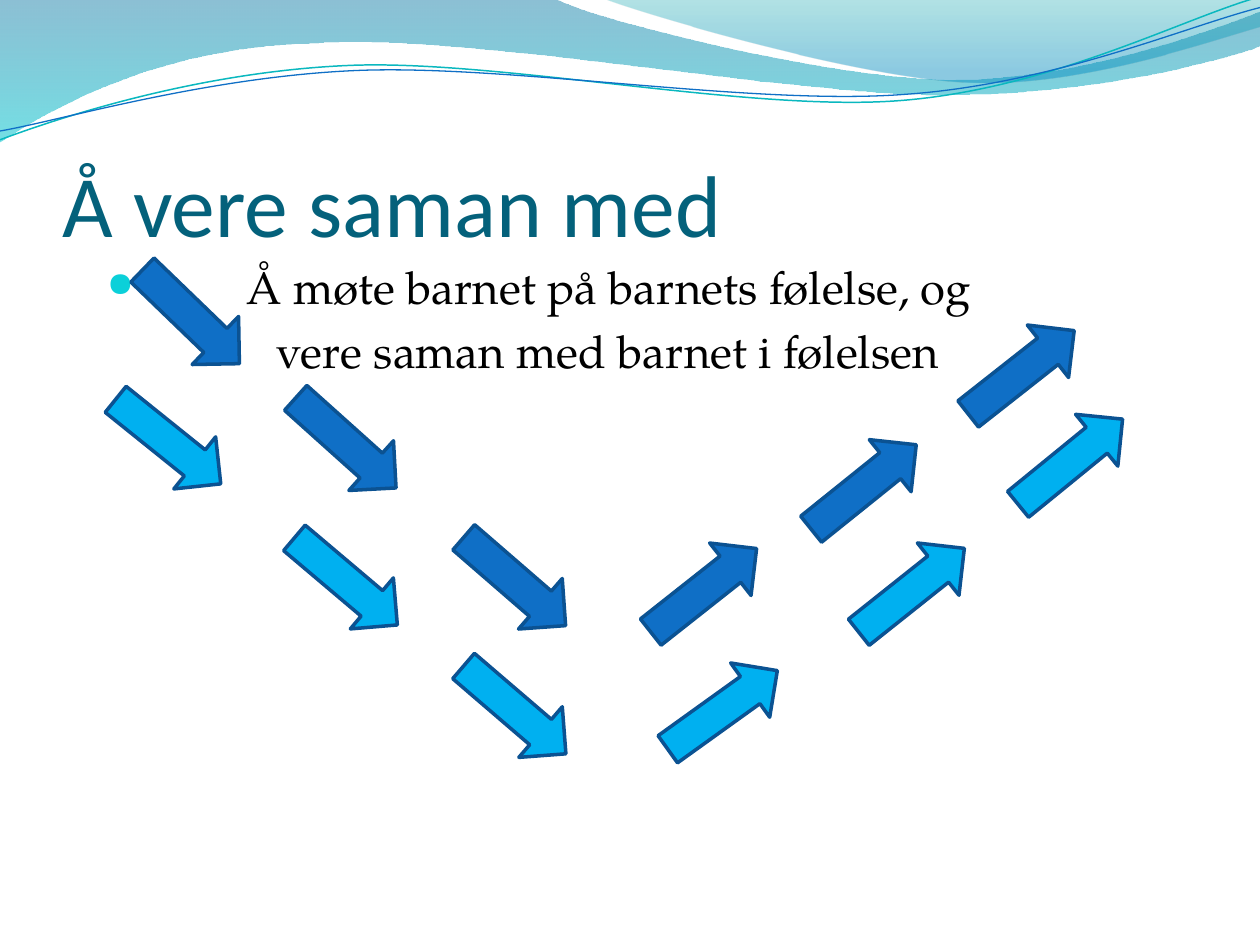
from lxml.etree import SubElement
from pptx import Presentation
from pptx.dml.color import RGBColor
from pptx.enum.shapes import MSO_SHAPE
from pptx.enum.text import MSO_ANCHOR
from pptx.oxml.ns import qn
from pptx.util import Inches, Pt


def color(hex_string):
    return RGBColor.from_string(hex_string)


def add_curve(shapes, segments, closed):
    """Draw segments as one outline: a pair is a line end, six numbers are a Bézier curve."""
    start, *others = segments
    points = [(Inches(x), Inches(y))
              for segment in others for x, y in zip(segment[::2], segment[1::2])]
    builder = shapes.build_freeform(Inches(start[0]), Inches(start[1]))
    builder.add_line_segments(points, close=closed)
    shape = builder.convert_to_shape()
    shape.shadow.inherit = False
    # Join each three line ends of a curve into one Bézier segment
    lines = iter(list(shape._element.iter(qn("a:lnTo"))))
    for segment in others:
        line = next(lines)
        if len(segment) == 6:
            line.tag = qn("a:cubicBezTo")
            for extra in (next(lines), next(lines)):
                line.append(extra[0])
                extra.getparent().remove(extra)
    return shape


presentation = Presentation()
presentation.slide_width = Inches(10)
presentation.slide_height = Inches(7.5)
slide = presentation.slides.add_slide(presentation.slide_layouts[6])

# Translucent waves along the top: outline, then (position, colour, opacity in percent)
waves = [
    ([(0, 0), (4.4, -0.01), (4.76, 0.17, 6.64, 0.63, 7.58, 0.63),
      (8.53, 0.63, 9.58, 0.26, 10, 0.09), (10.01, 0.36),
      (9.83, 0.44, 8.7, 0.76, 7.46, 0.75), (6.22, 0.75, 3.82, 0.28, 2.57, 0.34),
      (1.29, 0.36, 0.46, 0.83, -0.01, 1.13)],
     [(0, "0074A1", 45), (1, "00C6CF", 55)]),
    ([(4.79, -0.01), (5.09, 0.11, 6.82, 0.62, 7.69, 0.65),
      (8.56, 0.69, 9.61, 0.32, 10, 0.21), (10, 0)],
     [(0, "00A1A9", 30), (0.8, "008BBF", 45)]),
]
for segments, stops in waves:
    wave = add_curve(slide.shapes, segments, True)
    wave.line.fill.background()
    wave.fill.gradient()
    wave.fill.gradient_angle = 270
    for stop, (position, hex_string, opacity) in zip(wave.fill.gradient_stops, stops):
        stop.position = position
        stop.color.rgb = color(hex_string)
    fill_colors = wave._element.spPr.iter(qn("a:srgbClr"))
    for fill_color, (position, hex_string, opacity) in zip(fill_colors, stops):
        SubElement(fill_color, qn("a:alpha"), val=str(opacity * 1000))

# Thin wave lines
wave_lines = [
    ([(0, 1.11), (0.48, 0.93, 1.58, 0.57, 2.77, 0.52),
      (3.95, 0.47, 5.93, 0.89, 7.13, 0.8), (8.33, 0.71, 9.38, 0.15, 9.98, -0.02)],
     "0AB8BF", 0.85),
    ([(0, 1.04), (0.47, 0.96, 1.64, 0.61, 2.83, 0.56),
      (4.03, 0.51, 5.97, 0.84, 7.17, 0.75), (8.36, 0.67, 9.41, 0.21, 10, 0.06)],
     "0F6FC6", 0.75),
]
for segments, hex_string, width in wave_lines:
    wave_line = add_curve(slide.shapes, segments, False)
    wave_line.fill.background()
    wave_line.line.color.rgb = color(hex_string)
    wave_line.line.width = Pt(width)

# Title
title = slide.shapes.add_textbox(Inches(0.5), Inches(0.77), Inches(9), Inches(1.25))
title.text_frame.word_wrap = True
title.text_frame.vertical_anchor = MSO_ANCHOR.BOTTOM
title.text_frame.margin_left = title.text_frame.margin_right = 0
title.text_frame.margin_bottom = 0
run = title.text_frame.paragraphs[0].add_run()
run.text = "Å vere saman med"
run.font.name = "Calibri"
run.font.size = Pt(50)
run.font.color.rgb = color("04617B")

# Body: the bullet hangs in front of the first line
body = slide.shapes.add_textbox(Inches(0.75), Inches(2.01), Inches(9), Inches(4.8))
body.text_frame.word_wrap = True
body_lines = [
    ("Å møte barnet på barnets følelse, og", 1.11, -1.11),
    ("vere saman med barnet i følelsen", 1.35, 0),
]
for index, (text, margin, indent) in enumerate(body_lines):
    paragraph = body.text_frame.add_paragraph() if index else body.text_frame.paragraphs[0]
    paragraph.space_before = Pt(5.2)
    properties = paragraph._p.get_or_add_pPr()
    properties.set("marL", str(Inches(margin)))
    properties.set("indent", str(Inches(indent)))
    if indent:
        bullet_color = SubElement(properties, qn("a:buClr"))
        SubElement(bullet_color, qn("a:srgbClr"), val="0BD0D9")
        SubElement(properties, qn("a:buSzPct"), val="75000")
        SubElement(properties, qn("a:buChar"), char="●")
    run = paragraph.add_run()
    run.text = text
    run.font.name = "TeX Gyre Pagella"
    run.font.size = Pt(26)
    run.font.color.rgb = color("000000")

# Two rows of arrows, going down and then up: left, top, rotation
arrow_rows = {
    "0F6FC6": [(0.98, 2.25, 44), (2.21, 3.25, 41.9), (3.55, 4.35, 40.9),
               (5.05, 4.42, 321.7), (6.32, 3.6, 321.2), (7.57, 2.69, 321.8)],
    "00B0F0": [(0.8, 3.24, 38.8), (2.21, 4.35, 40.2), (3.55, 5.37, 40.6),
               (5.2, 5.37, 324.3), (6.7, 4.42, 321.5), (7.96, 3.4, 320.8)],
}
for hex_string, arrows in arrow_rows.items():
    for left, top, rotation in arrows:
        arrow = slide.shapes.add_shape(
            MSO_SHAPE.RIGHT_ARROW, Inches(left), Inches(top), Inches(1.07), Inches(0.53))
        arrow.rotation = rotation
        arrow.shadow.inherit = False
        arrow.fill.solid()
        arrow.fill.fore_color.rgb = color(hex_string)
        arrow.line.color.rgb = color("0B5292")
        arrow.line.width = Pt(2)

presentation.save("out.pptx")
